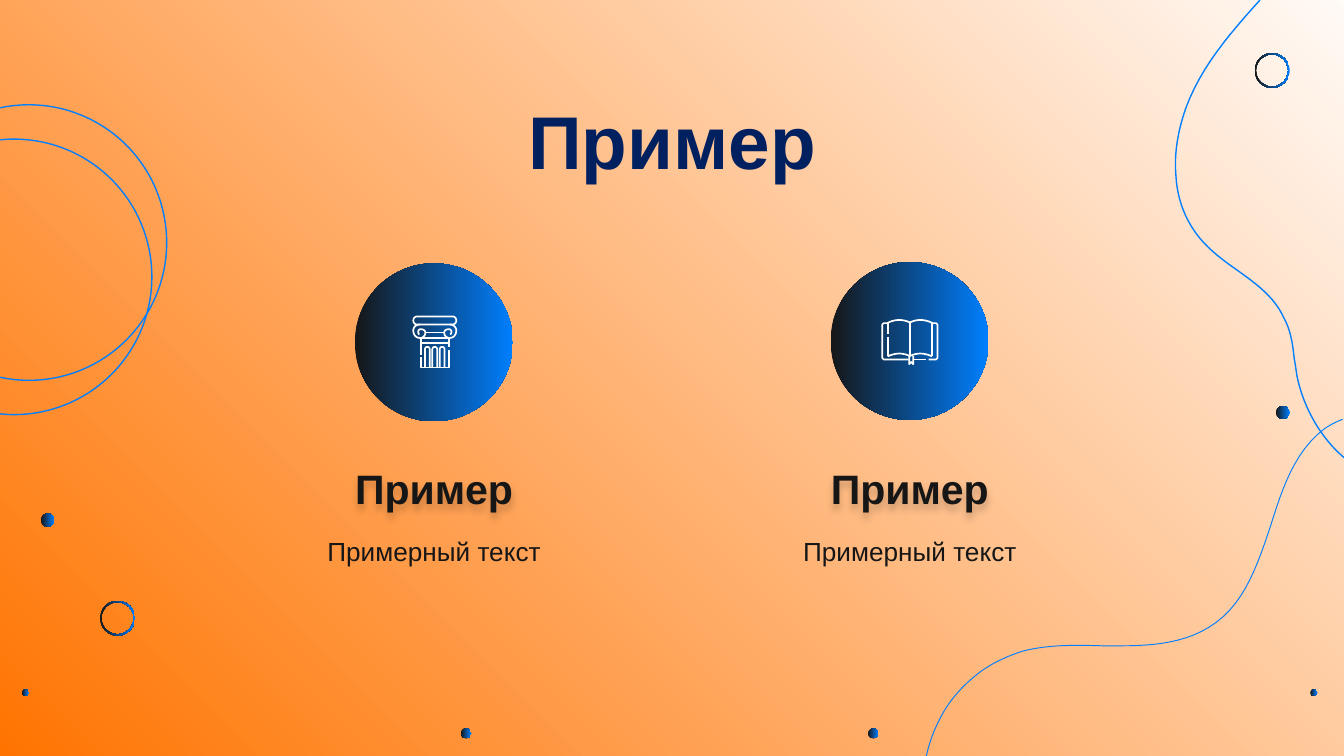
"""Build a slide with two icon columns on an orange gradient."""
from dataclasses import dataclass

from lxml import etree
from pptx import Presentation
from pptx.dml.color import RGBColor
from pptx.enum.shapes import MSO_SHAPE
from pptx.enum.text import MSO_ANCHOR, MSO_AUTO_SIZE, PP_ALIGN
from pptx.oxml.ns import qn
from pptx.util import Inches, Pt

OVAL, DONUT, RECT = MSO_SHAPE.OVAL, MSO_SHAPE.DONUT, MSO_SHAPE.RECTANGLE
TOP, BASE = MSO_ANCHOR.TOP, MSO_ANCHOR.BOTTOM
CENTER, FIXED = PP_ALIGN.CENTER, MSO_AUTO_SIZE.NONE
COLS, ROWS = 100, 56.25
CELL = Inches(10) / COLS
INK, BLUE, NAVY, WHITE, FLAME = "161616", "007FFF", "002060", "FFFFFF", "FF7401"
FONT = "Arial"


@dataclass
class Box:
    """A frame in grid columns and rows."""
    x: float
    y: float
    w: float
    h: float


@dataclass
class Label:
    """A text with its frame and look."""
    slot: int
    text: str
    box: Box
    size: float
    tint: str = INK
    bold: bool = False
    anchor: MSO_ANCHOR = TOP
    after: float = 0
    lead: float = 1
    glow: bool = False


def span(cells: float) -> int:
    """Turn grid cells into a length."""
    return round(cells * CELL)


def rgb(code: str) -> RGBColor:
    """Turn a hex string into a colour."""
    return RGBColor.from_string(code)


def blend(shape, first: str, last: str, angle: float) -> None:
    """Fill a shape with a two-stop gradient."""
    shape.fill.gradient()
    shape.fill.gradient_angle = angle
    for stop, code, place in zip(shape.fill.gradient_stops, (first, last), (0, 1)):
        stop.color.rgb = rgb(code)
        stop.position = place


def form(kind: MSO_SHAPE, box: Box):
    """Add a plain preset shape without line or shadow."""
    shape = slide.shapes.add_shape(kind, span(box.x), span(box.y), span(box.w), span(box.h))
    shape.shadow.inherit = False
    shape.line.fill.background()
    return shape


def line(shape, tint: str, width: float) -> None:
    """Leave a shape unfilled and outline it."""
    shape.fill.background()
    shape.line.color.rgb = rgb(tint)
    shape.line.width = Pt(width)


def disc(x: float, y: float, size: float, kind: MSO_SHAPE = OVAL) -> None:
    """Add a round shape running from dark to blue."""
    shape = form(kind, Box(x, y, size, size))
    if kind == DONUT:
        shape.adjustments[0] = 0.04
    blend(shape, INK, BLUE, 0)


def bend(*knots: tuple, steps: int = 12) -> list:
    """Sample a chain of cubic curves."""
    points = [knots[0]]
    for i in range(0, len(knots) - 1, 3):
        part = knots[i:i + 4]
        for n in range(1, steps + 1):
            t = n / steps
            share = ((1 - t) ** 3, 3 * t * (1 - t) ** 2, 3 * t * t * (1 - t), t ** 3)
            points.append(tuple(sum(s * k[a] for s, k in zip(share, part)) for a in (0, 1)))
    return points


def stroke(*paths: list, tint: str = WHITE, width: float = 0.9) -> None:
    """Draw open lines as one outline."""
    pen = None
    for path in paths:
        spots = [(span(x), span(y)) for x, y in path]
        if pen is None:
            pen = slide.shapes.build_freeform(*spots[0])
        else:
            pen.move_to(*spots[0])
        pen.add_line_segments(spots[1:], close=False)
    shape = pen.convert_to_shape()
    shape.shadow.inherit = False
    line(shape, tint, width)


def flip(points: list, axis: float) -> list:
    """Mirror the points about an upright axis."""
    return [(2 * axis - x, y) for x, y in points]


def arch(mid: float) -> list:
    """Trace one flute of the column."""
    a, b = mid - 0.18, mid + 0.18
    return [(a, 27.3), *bend((a, 26), (a, 25.75), (b, 25.75), (b, 26)), (b, 27.3)]


def column() -> None:
    """Draw the shaft and the head of the column icon."""
    mid = 32.35
    stroke([(31.3, 26.6), (31.3, 27.35), (33.4, 27.35), (33.4, 26.05)],
           *(arch(mid + shift) for shift in (-0.55, 0, 0.55)))
    cap = bend((mid, 23.55), (mid, 23.55), (31.05, 23.55), (31.05, 23.55),
               (30.65, 23.55), (30.65, 24.15), (31.05, 24.15),
               (31.05, 24.15), (mid, 24.15), (mid, 24.15))
    scroll = bend((31.25, 24.15), (30.9, 24.15), (30.75, 24.4), (30.75, 24.6),
                  (30.75, 24.9), (30.95, 25.15), (31.25, 25.15),
                  (31.5, 25.15), (31.65, 24.95), (31.65, 24.75),
                  (31.65, 24.6), (31.5, 24.5), (31.3, 24.5),
                  (31.1, 24.5), (31.05, 24.75), (31.2, 24.9))
    bars = [[(mid - half, y), (mid + half, y)]
            for half, y in ((0.75, 24.75), (1.1, 25.15), (1.05, 25.55))]
    stroke(cap, flip(cap, mid), scroll, flip(scroll, mid), *bars,
           [(31.3, 25.15), (31.3, 26.4)], [(33.4, 25.15), (33.4, 25.85)])


def book() -> None:
    """Draw the open book icon."""
    mid = 67.7
    edges = [bend((mid, y), (67.2, dip), (66.6, dip), (66.05, y + 0.03))
             for y, dip in ((24, 23.75), (26.5, 26.25))]
    cover = [(66.05, 24.05), (65.75, 24.05), (65.65, 24.15),
             (65.65, 26.65), (65.75, 26.75)]
    stroke(*edges, *(flip(edge, mid) for edge in edges),
           [(mid, 24), (mid, 26.5)], [(66.05, 24), (66.05, 24.85)],
           [(66.05, 25.05), (66.05, 26.53)], [(69.35, 24), (69.35, 26.53)],
           cover + [(67.6, 26.75)], flip(cover, mid) + [(69.1, 26.75)],
           [(68.9, 26.75), (67.95, 26.75)],
           [(67.65, 26.5), (67.65, 27.1), (67.8, 26.95), (67.95, 27.1), (67.95, 26.5)])


def write(label: Label) -> None:
    """Move a placeholder to the front and set its text."""
    hold = slide.placeholders[label.slot]
    slide.shapes._spTree.append(hold._element)
    box = label.box
    hold.left, hold.top, hold.width, hold.height = map(span, (box.x, box.y, box.w, box.h))
    frame = hold.text_frame
    frame.text = label.text
    frame.word_wrap, frame.auto_size = True, FIXED
    frame.vertical_anchor = label.anchor
    frame.margin_left = frame.margin_right = frame.margin_top = frame.margin_bottom = span(1)
    para = frame.paragraphs[0]
    props = para._p.get_or_add_pPr()
    props.set("marL", "0")
    props.set("indent", "0")
    etree.SubElement(props, qn("a:buNone"))
    para.alignment, para.line_spacing = CENTER, label.lead
    para.space_before, para.space_after = Pt(0), Pt(label.after)
    font = para.font
    font.name, font.size, font.bold = FONT, Pt(label.size), label.bold
    font.color.rgb = rgb(label.tint)
    if label.glow:
        effect = etree.SubElement(hold._element.spPr, qn("a:effectLst"))
        shade = etree.SubElement(effect, qn("a:outerShdw"), blurRad="50800", dist="38100", dir="5400000")
        tone = etree.SubElement(shade, qn("a:srgbClr"), val="000000")
        etree.SubElement(tone, qn("a:alpha"), val="20000")


deck = Presentation()
deck.slide_width, deck.slide_height = span(COLS), span(ROWS)
slide = deck.slides.add_slide(deck.slide_layouts[4])

blend(form(RECT, Box(0, -2.6, 103.2, 58.9)), FLAME, WHITE, 45)
stroke(bend((99.9, 31.2), (99.4, 31.4), (99, 31.6), (98.55, 31.9),
            (96.3, 33.6), (95.4, 36.4), (94.55, 39.1), (93.65, 41.8), (92.7, 44.7), (90.5, 46.3),
            (88.4, 47.9), (85.6, 48.05), (83.5, 48.05), (83, 48.05), (82.5, 48.05), (82, 48.05),
            (80, 48), (78, 47.95), (76.1, 48.45), (74.85, 48.85), (73.55, 49.45), (72.55, 50.3),
            (71.5, 51.15), (70.6, 52.2), (70, 53.35), (69.5, 54.3), (69.1, 55.35), (68.9, 56.4)),
       tint=BLUE, width=0.5)
stroke(bend((100, 34.05), (98.25, 32.55), (97.05, 30.4), (96.55, 28.2),
            (96.45, 27.7), (96.4, 27.2), (96.3, 26.7), (96.2, 25.7), (96.05, 24.6), (95.55, 23.7),
            (94.85, 22.1), (93.45, 21.1), (92.05, 20.1), (91.05, 19.4), (90.05, 18.65), (89.3, 17.75),
            (88.25, 16.5), (87.6, 14.9), (87.5, 13.1), (87.35, 11.4), (87.65, 9.7), (88.25, 8),
            (89.35, 5), (91.5, 2.5), (93.75, 0)), tint=BLUE, width=0.75)
for x, y in ((-9.2, 10.35), (-8.1, 7.8)):
    line(form(OVAL, Box(x, y, 20.5, 20.5)), BLUE, 0.75)
for x, y in ((93.35, 3.95), (7.45, 44.7)):
    disc(x, y, 2.6, DONUT)
for x, y, size in ((94.95, 30.2, 1), (64.6, 54.2, 0.75), (97.5, 51.3, 0.5),
                   (3.05, 38.2, 1), (34.3, 54.2, 0.75), (1.65, 51.3, 0.5),
                   (26.4, 19.6, 11.75), (61.8, 19.5, 11.75)):
    disc(x, y, size)

write(Label(0, "Пример", Box(7.85, 5.05, 84.3, 6.3), 40, NAVY, True, lead=1.15))
for slot, x in ((1, 19.75), (3, 55.15)):
    write(Label(slot, "Пример", Box(x, 34.35, 25.1, 4.8), 22, bold=True, anchor=BASE, after=12, glow=True))
    write(Label(slot + 1, "Примерный текст", Box(x, 38.8, 25.1, 7.8), 14))
column()
book()
deck.save("out.pptx")
